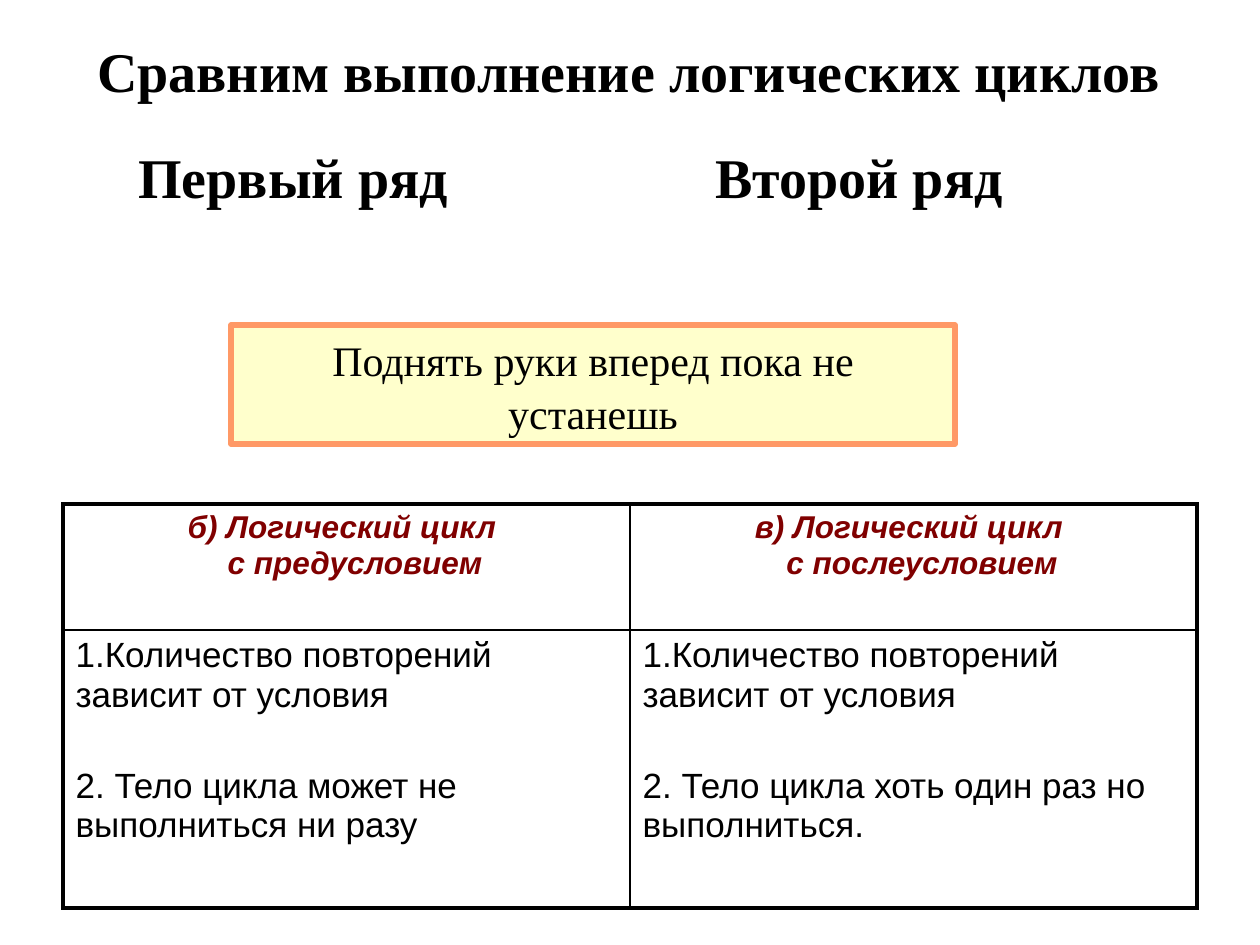
from pptx import Presentation
from pptx.dml.color import RGBColor
from pptx.enum.shapes import MSO_SHAPE
from pptx.enum.text import MSO_ANCHOR, PP_ALIGN
from pptx.oxml.ns import qn
from pptx.util import Emu, Pt
from lxml import etree

RECT = MSO_SHAPE.RECTANGLE
MIDDLE = MSO_ANCHOR.MIDDLE
LEFT, CENTER = PP_ALIGN.LEFT, PP_ALIGN.CENTER
SERIF, SANS = "Times New Roman", "Arial"
COLORS = {"text": "000000", "heading": "800000", "task": "FFFFCC",
          "task_line": "FF9966", "border": "000000"}
OUTER, INNER = 2.25, 1
HEADINGS = [("б) Логический цикл", "с предусловием"),
            ("в) Логический цикл", "с послеусловием")]
POINTS = [("1.Количество повторений зависит от условия",
           "2. Тело цикла может не выполниться ни разу"),
          ("1.Количество повторений зависит от условия",
           "2. Тело цикла хоть один раз но выполниться.")]


def px(n):
    return Emu(round(n * 914400 / 126))


def rgb(name):
    return RGBColor.from_string(COLORS[name])


def write(tf, lines, size, font, color="text", align=LEFT, bold=False, italic=False):
    tf.word_wrap = True
    tf.text = "\n".join(lines)
    for p in tf.paragraphs:
        p.alignment = align
        for r in p.runs:
            r.font.name, r.font.size = font, Pt(size)
            r.font.bold, r.font.italic = bold, italic
            r.font.color.rgb = rgb(color)


def add_title(slide, box, text, align=LEFT):
    tb = slide.shapes.add_textbox(*map(px, box))
    write(tb.text_frame, [text], 32, SERIF, align=align, bold=True)


def add_task(slide, box, text):
    s = slide.shapes.add_shape(RECT, *map(px, box))
    s.shadow.inherit = False
    s.fill.solid()
    s.fill.fore_color.rgb = rgb("task")
    s.line.color.rgb = rgb("task_line")
    s.line.width = Pt(3)
    write(s.text_frame, [text], 24, SERIF, align=CENTER)
    s.text_frame.vertical_anchor = MIDDLE
    s.text_frame.paragraphs[0].line_spacing = 1.05


def set_borders(cell, widths):
    """Draw the left, right, top and bottom borders, widths in points."""
    tcPr = cell._tc.get_or_add_tcPr()
    for i, (side, width) in enumerate(zip("LRTB", widths)):
        ln = etree.Element(qn(f"a:ln{side}"), w=str(Pt(width)))
        fill = etree.SubElement(ln, qn("a:solidFill"))
        etree.SubElement(fill, qn("a:srgbClr"), val=COLORS["border"])
        tcPr.insert(i, ln)


def add_comparison(slide, box, row_heights):
    table = slide.shapes.add_table(2, 2, *map(px, box)).table
    table.first_row = table.horz_banding = False
    for row, height in zip(table.rows, row_heights):
        row.height = px(height)
    for c in range(2):
        table.columns[c].width = px(box[2] / 2)
        head, body = table.cell(0, c), table.cell(1, c)
        write(head.text_frame, HEADINGS[c], 18, SANS, "heading", CENTER, True, True)
        first, second = head.text_frame.paragraphs
        first._p.get_or_add_pPr().set("marR", str(px(9)))
        second._p.get_or_add_pPr().set("marL", str(px(26)))
        write(body.text_frame, POINTS[c], 20, SANS)
        body.text_frame.paragraphs[1].space_before = Pt(30)
        sides = (INNER, OUTER) if c else (OUTER, INNER)
        for cell, ends in ((head, (OUTER, INNER)), (body, (INNER, OUTER))):
            cell.fill.background()
            set_borders(cell, sides + ends)


def main():
    prs = Presentation()
    prs.slide_width, prs.slide_height = px(1260), px(945)
    slide = prs.slides.add_slide(prs.slide_layouts[6])
    add_title(slide, (28, 30, 1202, 80), "Сравним выполнение логических циклов", CENTER)
    add_task(slide, (231, 325, 724, 119), "Поднять руки вперед пока не устешь".replace("устешь", "устанешь"))
    for left, text in ((126, "Первый ряд"), (703, "Второй ряд")):
        add_title(slide, (left, 136, 451, 80), text)
    add_comparison(slide, (63, 504, 1134, 404), (126, 278))
    prs.save("out.pptx")


if __name__ == "__main__":
    main()
